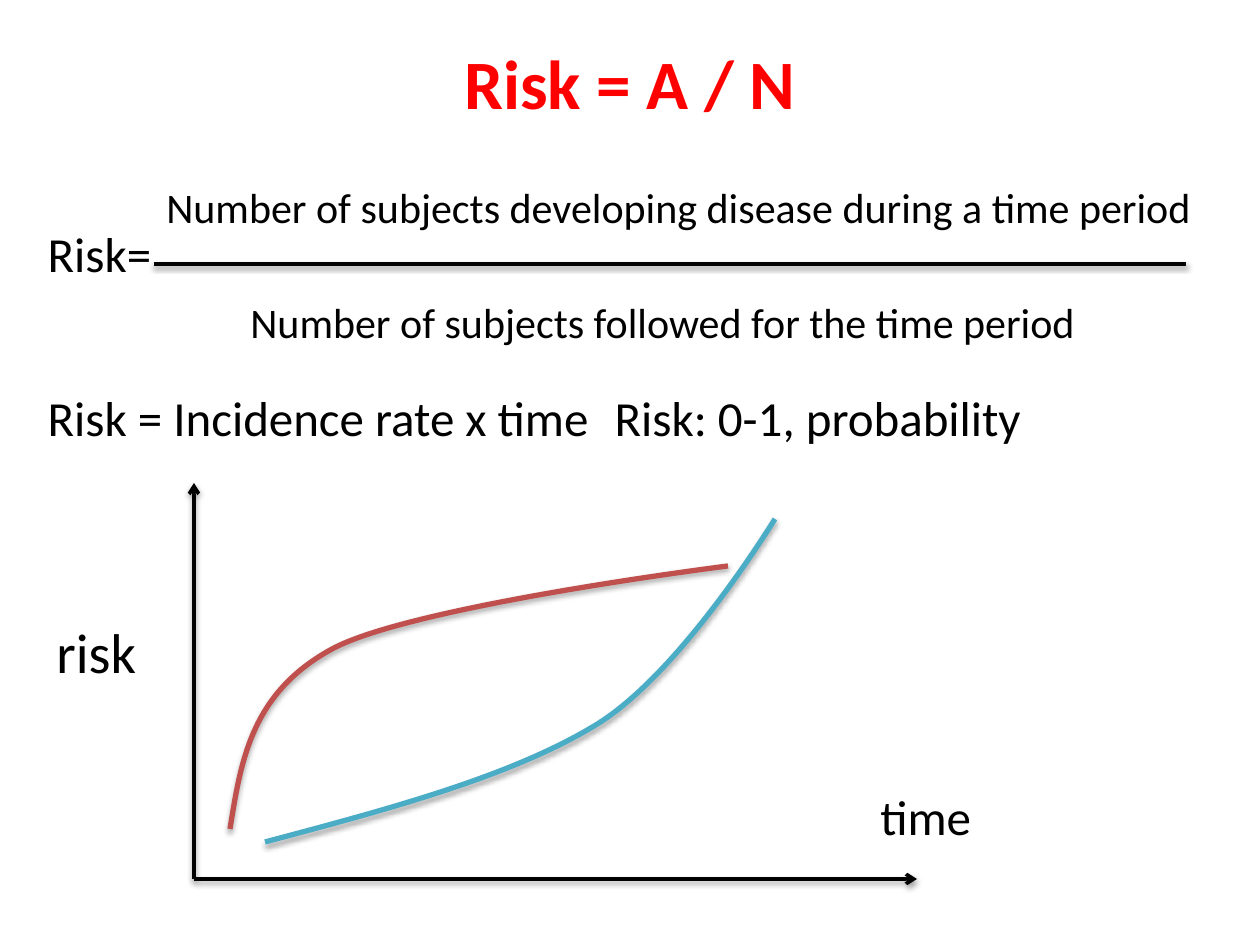
import lxml.etree
import pptx
import pptx.dml.color
import pptx.enum.shapes
import pptx.enum.text
import pptx.oxml.ns
import pptx.util

PX = 914400 // 126
BLACK = "000000"

TITLE = ("Risk = A / N", (63, 38, 1134, 87))
BODY_BOX = (35, 217, 1225, 673)
BODY_TAB = 695
BODY = [  # text, space before in points
    ("Risk=", 0),
    ("Risk = Incidence rate x time\tRisk: 0-1, probability", 60),
]
LABELS = [  # text, size, box
    ("Number of subjects developing disease during a time period", 24, (154, 175, 1061, 63)),
    ("Number of subjects followed for the time period", 24, (238, 290, 858, 63)),
    ("time", 28, (868, 780, 117, 72)),
    ("risk", 32, (44, 611, 106, 81)),
]
ORIGIN = (194, 879)
LINES = [  # start, end, has arrowhead
    ((154, 264), (1186, 264), False),
    (ORIGIN, (917, 879), True),
    (ORIGIN, (194, 483), True),
]
CURVES = [  # colour, start point followed by Bezier triples
    ("C0504D", [(230, 829), (241, 761), (251, 692), (334, 648),
                (417, 605), (728, 566), (728, 566)]),
    ("4BACC6", [(265, 842), (389, 809), (514, 776), (599, 723),
                (684, 669), (774, 520), (775, 519)]),
]


def color(value):
    return pptx.dml.color.RGBColor.from_string(value)


def add_xml(parent, tag, **attributes):
    element = lxml.etree.SubElement(parent, pptx.oxml.ns.qn(tag))
    for name, value in attributes.items():
        element.set(name, str(value))
    return element


def place(shape, box):
    for name, value in zip(("left", "top", "width", "height"), box):
        setattr(shape, name, value * PX)


def write(para, text, size, fill=BLACK, bold=False):
    span = para.add_run()
    span.text = text
    formats = {"name": "Calibri", "size": pptx.util.Pt(size), "bold": bold}
    for name, value in formats.items():
        setattr(span.font, name, value)
    span.font.color.rgb = color(fill)


def draw_outline(shape, fill, width, opacity, distance, arrow=False):
    """Set line colour, width, optional arrowhead and a soft shadow below."""
    shape.line.color.rgb = color(fill)
    shape.line.width = pptx.util.Pt(width)
    properties = shape._element.spPr
    if arrow:
        add_xml(properties.find(pptx.oxml.ns.qn("a:ln")), "a:tailEnd", type="arrow")
    effects = add_xml(properties, "a:effectLst")
    shadow = add_xml(effects, "a:outerShdw", blurRad=40000, dist=distance,
                     dir=5400000, rotWithShape=0)
    tint = add_xml(shadow, "a:srgbClr", val=BLACK)
    add_xml(tint, "a:alpha", val=opacity * 1000)


def bend(shape):
    """Turn each three straight segments into one cubic Bezier segment."""
    outline = shape._element.find(".//" + pptx.oxml.ns.qn("a:path"))
    segments = outline.findall(pptx.oxml.ns.qn("a:lnTo"))
    for first in range(0, len(segments), 3):
        cubic = add_xml(outline, "a:cubicBezTo")
        for segment in segments[first:first + 3]:
            cubic.append(segment[0])
            outline.remove(segment)


def fill_placeholders(page):
    text, box = TITLE
    title, body = page.shapes.title, page.placeholders[1]
    place(title, box)
    place(body, BODY_BOX)
    for shape, anchor in ((title, "MIDDLE"), (body, "TOP")):
        shape.text_frame.auto_size = pptx.enum.text.MSO_AUTO_SIZE.NONE
        shape.text_frame.vertical_anchor = getattr(pptx.enum.text.MSO_ANCHOR, anchor)
    para = title.text_frame.paragraphs[0]
    para.alignment = pptx.enum.text.PP_ALIGN.CENTER
    write(para, text, 39.6, "FF0000", True)

    for index, (text, gap) in enumerate(BODY):
        frame = body.text_frame
        para = frame.add_paragraph() if index else frame.paragraphs[0]
        write(para, text, 28)
        para.space_before = pptx.util.Pt(gap)
        properties = para._p.get_or_add_pPr()
        properties.set("marL", "0")
        properties.set("indent", "0")
        add_xml(properties, "a:buNone")
        add_xml(add_xml(properties, "a:tabLst"), "a:tab", pos=BODY_TAB * PX, algn="l")


def add_label(page, text, size, box):
    label = page.shapes.add_textbox(*(value * PX for value in box))
    label.text_frame.word_wrap = False
    label.text_frame.auto_size = pptx.enum.text.MSO_AUTO_SIZE.SHAPE_TO_FIT_TEXT
    write(label.text_frame.paragraphs[0], text, size)


def add_line(page, start, end, arrow):
    line = page.shapes.add_connector(
        pptx.enum.shapes.MSO_CONNECTOR.STRAIGHT, *(value * PX for value in start + end))
    draw_outline(line, BLACK, 2, 38, 20000, arrow)


def add_curve(page, fill, points):
    builder = page.shapes.build_freeform(*points[0], scale=PX)
    builder.add_line_segments(points[1:], close=False)
    curve = builder.convert_to_shape()
    bend(curve)
    curve.fill.background()
    draw_outline(curve, fill, 3, 35, 23000)


def main():
    deck = pptx.Presentation()
    deck.slide_width = 1260 * PX
    deck.slide_height = 945 * PX
    page = deck.slides.add_slide(deck.slide_layouts[1])
    fill_placeholders(page)
    for line in LINES:
        add_line(page, *line)
    for curve in CURVES:
        add_curve(page, *curve)
    for label in LABELS:
        add_label(page, *label)
    deck.save("out.pptx")


if __name__ == "__main__":
    main()
